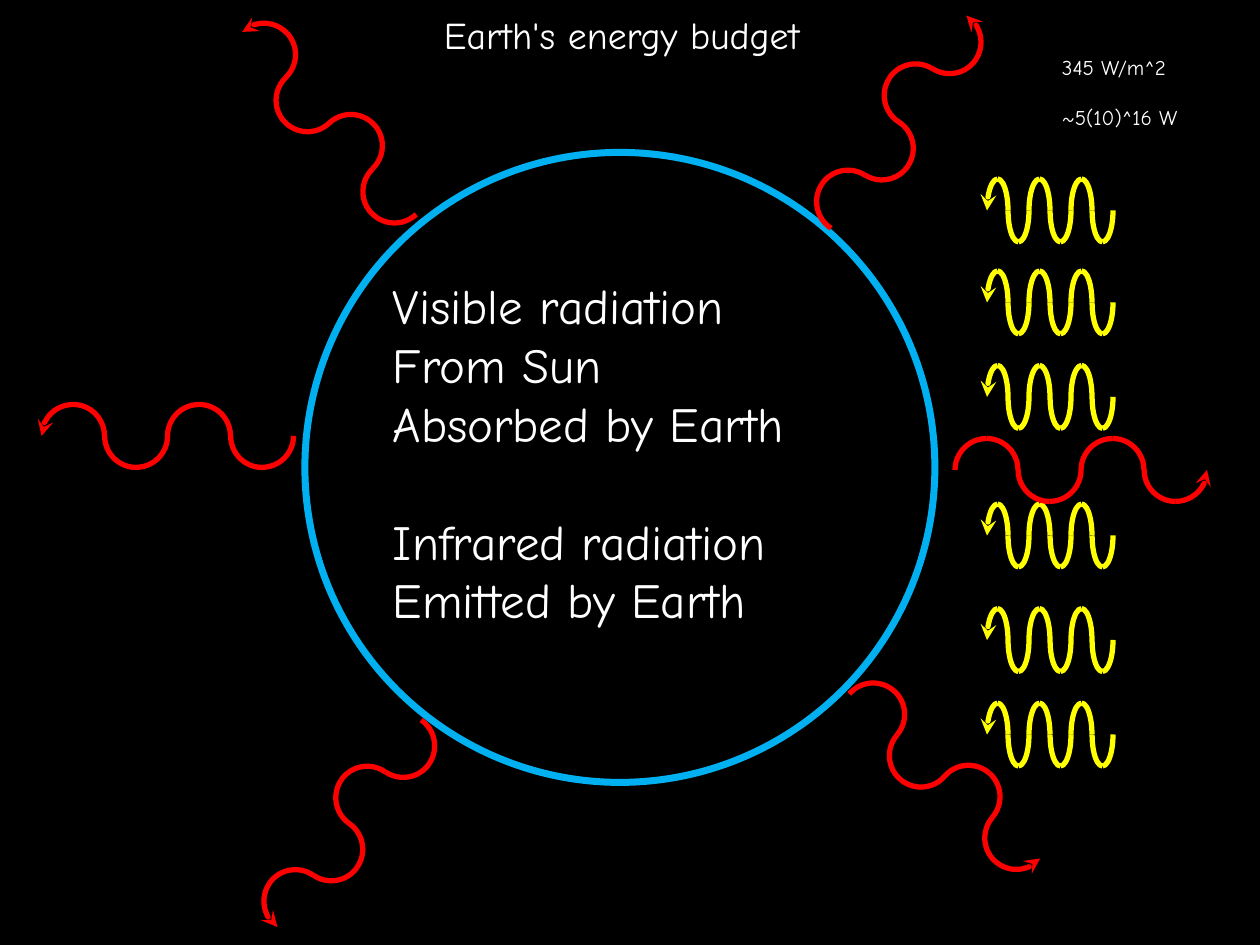
"""Build the slide on Earth's energy budget."""
import math

import pptx
import pptx.dml.color
import pptx.enum.shapes
import pptx.enum.text
import pptx.oxml
import pptx.oxml.ns
import pptx.util

RGBColor = pptx.dml.color.RGBColor
Inches = pptx.util.Inches
Pt = pptx.util.Pt
Shape = pptx.enum.shapes.MSO_SHAPE

BLACK = RGBColor(0x00, 0x00, 0x00)
WHITE = RGBColor(0xFF, 0xFF, 0xFF)
BLUE = RGBColor(0x00, 0xB0, 0xF0)
RED = RGBColor(0xFF, 0x00, 0x00)
YELLOW = RGBColor(0xFF, 0xFF, 0x00)
FONT = "Comic Neue"
LINE_HEIGHT = 1.2

SUNLIGHT_X = 8.75
SUNLIGHT_ROWS = [1.67, 2.4, 3.15, 4.25, 5.08, 5.83]
INFRARED_WAVES = [
    (3.13, 1.52, 226.4),
    (6.93, 5.67, 40.8),
    (6.73, 1.6, 302.5),
    (7.83, 3.73, 0),
    (2.08, 3.46, 180),
    (3.2, 5.92, 124.8),
]


def format_runs(para, size):
    """Give every run of a paragraph the slide's font."""
    for span in para.runs:
        span.font.name = FONT
        span.font.size = Pt(size)
        span.font.color.rgb = WHITE


def add_title(page, text):
    """Fill the title placeholder, leaving an empty line below the text."""
    title = page.shapes.title
    title.left, title.top = Inches(1.96), Inches(0.17)
    title.width, title.height = Inches(5.95), Inches(0.98)
    frame = title.text_frame
    frame.auto_size = pptx.enum.text.MSO_AUTO_SIZE.NONE
    frame.vertical_anchor = pptx.enum.text.MSO_ANCHOR.MIDDLE
    frame.text = text + "\v"
    para = frame.paragraphs[0]
    para.alignment = pptx.enum.text.PP_ALIGN.CENTER
    para.line_spacing = 0.9
    format_runs(para, 21.6)


def add_text(page, left, top, width, height, blocks, size):
    """Add a text box whose blocks of lines are one line apart."""
    box = page.shapes.add_textbox(
        Inches(left), Inches(top), Inches(width), Inches(height))
    frame = box.text_frame
    frame.word_wrap = True
    frame.auto_size = pptx.enum.text.MSO_AUTO_SIZE.SHAPE_TO_FIT_TEXT
    frame.text = "\n".join("\n".join(block) for block in blocks)
    for para in frame.paragraphs:
        format_runs(para, size)
    start = 0
    for block in blocks[:-1]:
        start += len(block)
        frame.paragraphs[start].space_before = Pt(size * LINE_HEIGHT)


def add_outline(shapes, kind, center_x, center_y, width, height, color, weight):
    """Add an unfilled shape around a centre point."""
    shape = shapes.add_shape(
        kind, Inches(center_x - width / 2), Inches(center_y - height / 2),
        Inches(width), Inches(height))
    shape.shadow.inherit = False
    shape.fill.background()
    shape.line.color.rgb = color
    shape.line.width = Pt(weight)
    return shape


def add_arrowhead(shape):
    """Put a stealth arrowhead at the start of an outline."""
    head = pptx.oxml.parse_xml(
        f'<a:headEnd {pptx.oxml.ns.nsdecls("a")} type="stealth"/>')
    shape.line._get_or_add_ln().append(head)


def add_wave(page, center_x, center_y, angle, count, width, height, color):
    """Add a wave of half ellipses, each two arcs, that runs along an angle."""
    group = page.shapes.add_group_shape()
    step_x = width * math.cos(math.radians(angle))
    step_y = width * math.sin(math.radians(angle))
    for index in range(count):
        x, y = center_x + index * step_x, center_y + index * step_y
        rotation = angle + 180 * index
        first = add_outline(group.shapes, Shape.ARC, x, y, width, height, color, 3)
        first.rotation = rotation % 360
        last = add_outline(group.shapes, Shape.ARC, x, y, height, width, color, 3)
        last.rotation = (rotation - 90) % 360
    add_arrowhead(last)


def main():
    """Build and save the deck."""
    deck = pptx.Presentation()
    deck.slide_width, deck.slide_height = Inches(10), Inches(7.5)
    page = deck.slides.add_slide(deck.slide_layouts.get_by_name("Title Only"))
    page.background.fill.solid()
    page.background.fill.fore_color.rgb = BLACK

    add_title(page, "Earth's energy budget")
    add_outline(page.shapes, Shape.OVAL, 4.92, 3.71, 5, 5, BLUE, 4)
    add_text(page, 3.02, 2.14, 4.05, 2.93, [
        ["Visible radiation", "From Sun", "Absorbed by Earth"],
        ["Infrared radiation", "Emitted by Earth"],
    ], 28)
    for row in SUNLIGHT_ROWS:
        add_wave(page, SUNLIGHT_X, row, 180, 6, 1 / 6, 0.5, YELLOW)
    for center_x, center_y, angle in INFRARED_WAVES:
        add_wave(page, center_x, center_y, angle, 4, 0.5, 0.5, RED)
    add_text(page, 8.33, 0.38, 1.32, 0.71, [["345 W/m^2"], ["~5(10)^16 W"]], 12)
    deck.save("out.pptx")


if __name__ == "__main__":
    main()
